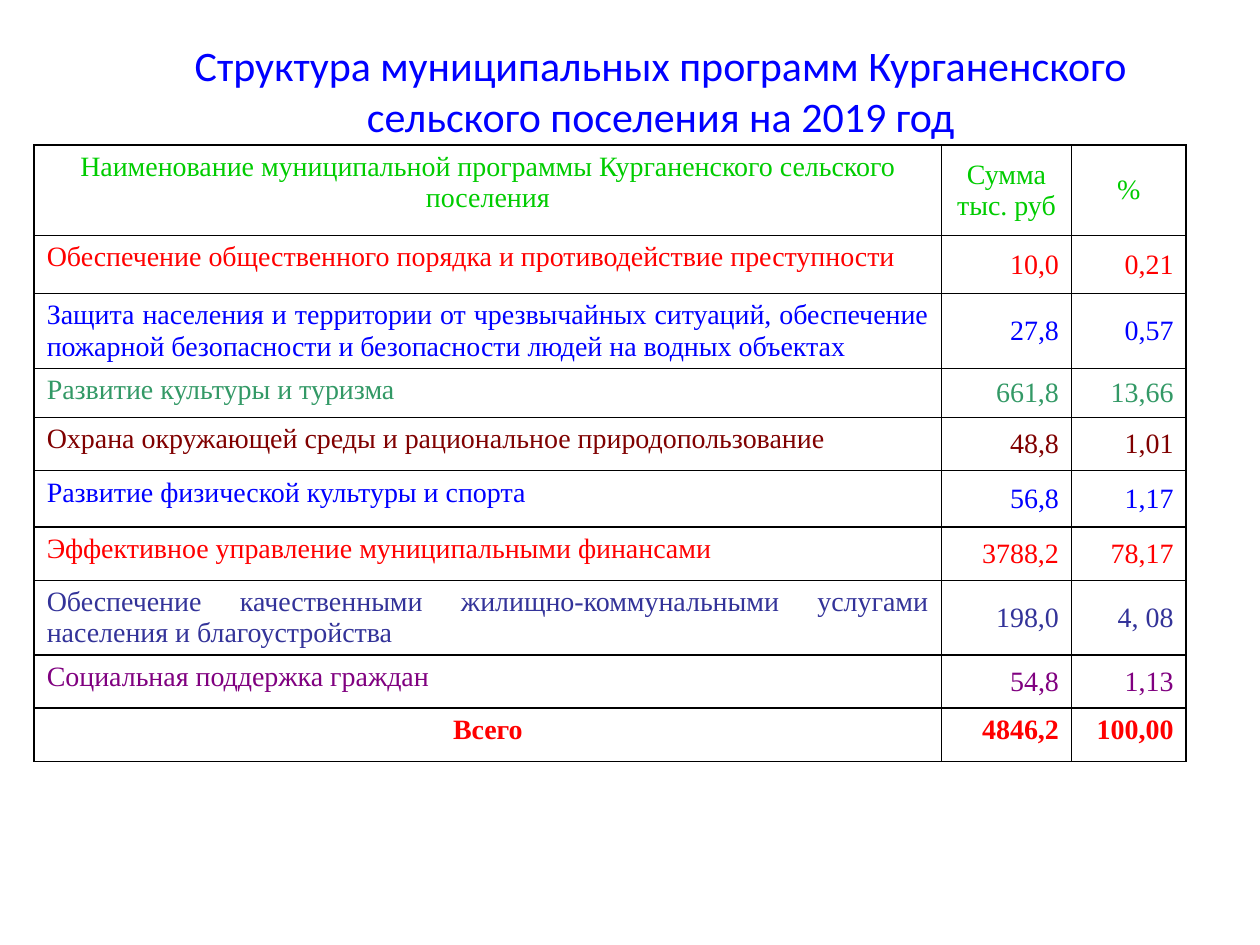
from lxml import etree
from pptx import Presentation
from pptx.dml.color import RGBColor
from pptx.enum.text import MSO_ANCHOR, MSO_AUTO_SIZE, PP_ALIGN
from pptx.oxml.ns import qn
from pptx.util import Cm, Pt

TOP, MIDDLE = MSO_ANCHOR.TOP, MSO_ANCHOR.MIDDLE
CENTER, RIGHT, JUSTIFY = PP_ALIGN.CENTER, PP_ALIGN.RIGHT, PP_ALIGN.JUSTIFY
NO_AUTOFIT = MSO_AUTO_SIZE.NONE
TITLE_ONLY = 5

COLORS = {
    "blue": "0000FF", "lime": "00CC00", "red": "FF0000", "green": "339966",
    "maroon": "800000", "indigo": "333399", "purple": "800080",
    "black": "000000", "white": "FFFFFF",
}

TITLE = "Структура муниципальных программ Курганенского сельского поселения на 2019 год"
COL_WIDTHS = [18.29, 2.62, 2.31]
# Row height in cm, text colour, name, sum, percent
ROWS = [
    (1.83, "lime", "Наименование муниципальной программы Курганенского сельского поселения",
     "Сумма тыс. руб", "%"),
    (1.17, "red", "Обеспечение общественного порядка и противодействие преступности",
     "10,0", "0,21"),
    (1.19, "blue", "Защита населения и территории от чрезвычайных ситуаций, обеспечение "
     "пожарной безопасности и безопасности людей на водных объектах", "27,8", "0,57"),
    (0.99, "green", "Развитие культуры и туризма", "661,8", "13,66"),
    (1.07, "maroon", "Охрана окружающей среды и рациональное природопользование",
     "48,8", "1,01"),
    (1.14, "blue", "Развитие физической культуры и спорта", "56,8", "1,17"),
    (1.07, "red", "Эффективное управление муниципальными финансами", "3788,2", "78,17"),
    (1.47, "indigo", "Обеспечение качественными жилищно-коммунальными услугами "
     "населения и благоустройства", "198,0", "4, 08"),
    (1.07, "purple", "Социальная поддержка граждан", "54,8", "1,13"),
    (1.07, "red", "Всего", "4846,2", "100,00"),
]


def rgb(name):
    return RGBColor.from_string(COLORS[name])


def format_text(tf, align, font, size, color, bold=False):
    p = tf.paragraphs[0]
    p.alignment = align
    f = p.runs[0].font
    f.name, f.size, f.bold = font, Pt(size), bold
    f.color.rgb = rgb(color)


def add_title(s):
    sp = s.shapes.title
    sp.left, sp.top, sp.width, sp.height = Cm(2.54), Cm(0.71), Cm(21.56), Cm(2.21)
    tf = sp.text_frame
    tf.text = TITLE
    tf.word_wrap = True
    tf.auto_size = NO_AUTOFIT
    tf.vertical_anchor = MIDDLE
    format_text(tf, CENTER, "Calibri", 24, "blue")


def set_borders(cell):
    """Draw all four sides; borders must precede the fill in tcPr."""
    tcPr = cell._tc.get_or_add_tcPr()
    for i, side in enumerate(("lnL", "lnR", "lnT", "lnB")):
        ln = etree.Element(qn(f"a:{side}"), w=str(Pt(1)))
        fill = etree.SubElement(ln, qn("a:solidFill"))
        etree.SubElement(fill, qn("a:srgbClr"), val=COLORS["black"])
        tcPr.insert(i, ln)


def fill_cell(cell, text, align, anchor, color, bold):
    cell.text = text
    cell.vertical_anchor = anchor
    cell.fill.solid()
    cell.fill.fore_color.rgb = rgb("white")
    set_borders(cell)
    format_text(cell.text_frame, align, "Times New Roman", 16, color, bold)


def add_programs_table(s):
    height = sum(row[0] for row in ROWS)
    table = s.shapes.add_table(len(ROWS), len(COL_WIDTHS), Cm(0.69), Cm(2.92),
                               Cm(sum(COL_WIDTHS)), Cm(height)).table
    table.horz_banding = False
    table.first_row = False
    for column, width in zip(table.columns, COL_WIDTHS):
        column.width = Cm(width)
    last = len(ROWS) - 1
    for i, (row_height, color, *texts) in enumerate(ROWS):
        table.rows[i].height = Cm(row_height)
        for j, text in enumerate(texts):
            if j == 0:
                align = CENTER if i in (0, last) else JUSTIFY
            else:
                align = CENTER if i == 0 else RIGHT
            anchor = TOP if j == 0 or i == last else MIDDLE
            fill_cell(table.cell(i, j), text, align, anchor, color, i == last)


def main():
    prs = Presentation()
    prs.slide_width, prs.slide_height = Cm(25.4), Cm(19.05)
    s = prs.slides.add_slide(prs.slide_layouts[TITLE_ONLY])
    add_title(s)
    add_programs_table(s)
    prs.save("out.pptx")


if __name__ == "__main__":
    main()
